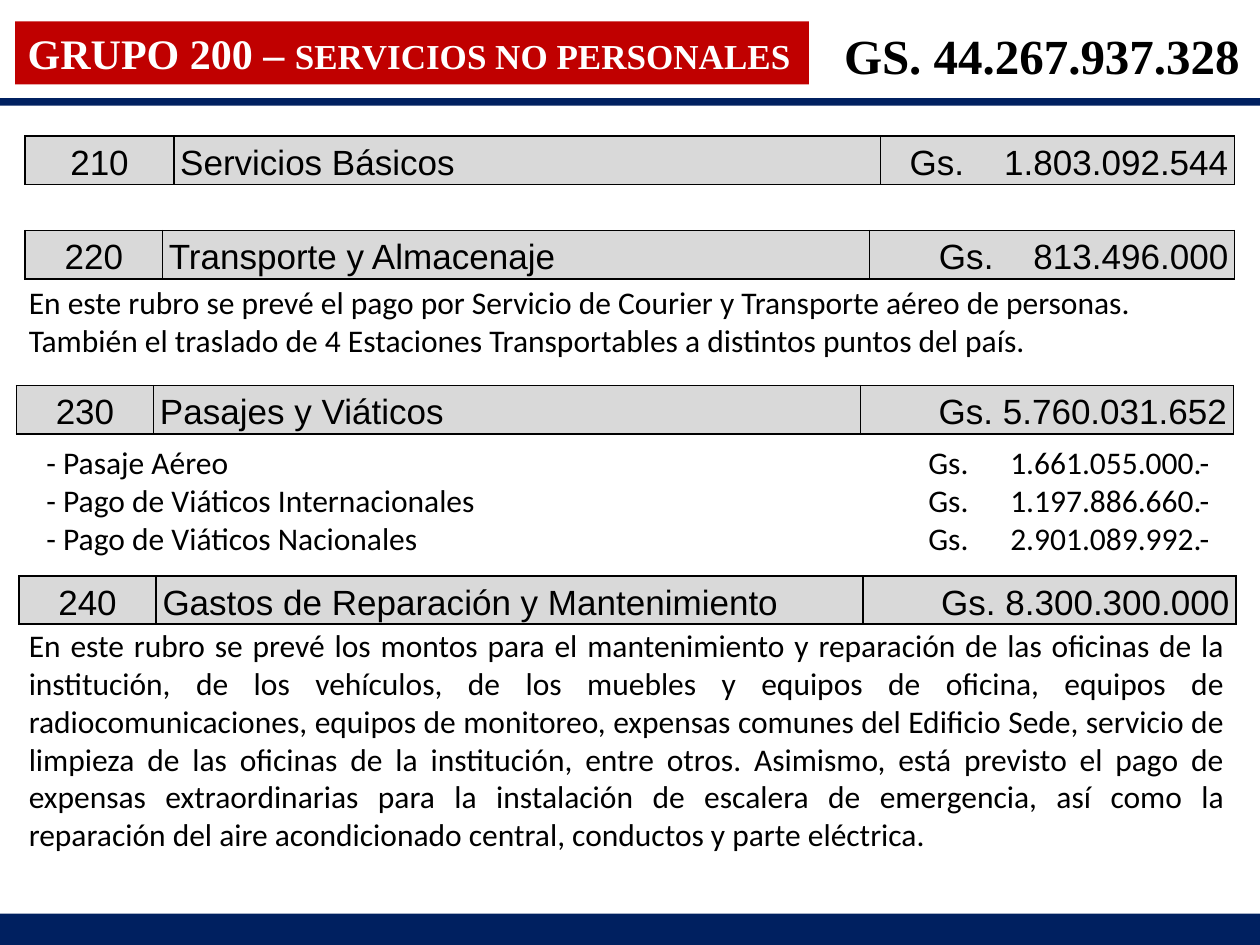
import pptx
import pptx.util
import pptx.oxml.ns
import pptx.dml.color
import pptx.enum.text
import pptx.enum.shapes
from lxml import etree

Inches = pptx.util.Inches
Pt = pptx.util.Pt
RGB = pptx.dml.color.RGBColor.from_string
qn = pptx.oxml.ns.qn
ALIGN = pptx.enum.text.PP_ALIGN
RECT = pptx.enum.shapes.MSO_SHAPE.RECTANGLE

COLORS = {"red": "C00000", "navy": "002060", "gray": "D9D9D9",
          "white": "FFFFFF", "black": "000000"}
HEAD = {"name": "Times New Roman", "bold": True}
BODY = {"name": "Calibri", "size": Pt(18)}
CELL = {"name": "Arial", "size": Pt(20)}


def write(para, text, style, color="black", align=ALIGN.LEFT):
    para.alignment = align
    run = para.add_run()
    run.text = text
    for key, value in style.items():
        setattr(run.font, key, value)
    run.font.color.rgb = RGB(COLORS[color])


def stops(para, places):
    tabs = etree.SubElement(para._p.get_or_add_pPr(), qn("a:tabLst"))
    for place in places:
        etree.SubElement(tabs, qn("a:tab"), pos=str(Inches(place)), algn="l")


deck = pptx.Presentation()
deck.slide_width, deck.slide_height = Inches(10), Inches(7.5)
slide = deck.slides.add_slide(deck.slide_layouts[5])
shapes = slide.shapes

title = shapes.title
title.left, title.top = Inches(0.12), Inches(0.17)
title.width, title.height = Inches(6.3), Inches(0.5)
title.fill.solid()
title.fill.fore_color.rgb = RGB(COLORS["red"])
frame = title.text_frame
frame.auto_size = pptx.enum.text.MSO_AUTO_SIZE.NONE
frame.vertical_anchor = pptx.enum.text.MSO_ANCHOR.TOP
for text, size in [("GRUPO 200 – ", 24), ("SERVICIOS NO PERSONALES", 20)]:
    write(frame.paragraphs[0], text, {**HEAD, "size": Pt(size)}, "white")

for top, height in [(0.78, 0.06), (7.25, 0.25)]:
    band = shapes.add_shape(RECT, 0, Inches(top), Inches(10), Inches(height))
    band.shadow.inherit = False
    band.fill.solid()
    band.fill.fore_color.rgb = RGB(COLORS["navy"])
    band.line.fill.background()

texts = [
    (6.6, 0.15, 3.39, 0.57, {**HEAD, "size": Pt(28)}, ALIGN.LEFT, [],
     ["GS. 44.267.937.328"]),
    (0.13, 2.2, 9.75, 0.71, BODY, ALIGN.LEFT, [],
     ["En este rubro se prevé el pago por Servicio de Courier y Transporte "
      "aéreo de personas. También el traslado de 4 Estaciones Transportables "
      "a distintos puntos del país."]),
    (0.27, 3.47, 9.53, 1.01, BODY, ALIGN.LEFT, [7, 7.65],
     ["- Pasaje Aéreo\tGs.\t1.661.055.000.-",
      "- Pago de Viáticos Internacionales\tGs.\t1.197.886.660.-",
      "- Pago de Viáticos Nacionales\tGs.\t2.901.089.992.-"]),
    (0.13, 4.92, 9.69, 1.92, BODY, ALIGN.JUSTIFY, [],
     ["En este rubro se prevé los montos para el mantenimiento y reparación "
      "de las oficinas de la institución, de los vehículos, de los muebles y "
      "equipos de oficina, equipos de radiocomunicaciones, equipos de "
      "monitoreo, expensas comunes del Edificio Sede, servicio de limpieza "
      "de las oficinas de la institución, entre otros. Asimismo, está "
      "previsto el pago de expensas extraordinarias para la instalación de "
      "escalera de emergencia, así como la reparación del aire acondicionado "
      "central, conductos y parte eléctrica."]),
]
for left, top, width, height, style, align, places, lines in texts:
    box = shapes.add_textbox(Inches(left), Inches(top), Inches(width), Inches(height))
    frame = box.text_frame
    frame.word_wrap = True
    for i, line in enumerate(lines):
        para = frame.paragraphs[0] if i == 0 else frame.add_paragraph()
        write(para, line, style, align=align)
        if places:
            stops(para, places)

tables = [
    (0.2, 1.08, [1.18, 5.61, 2.81], ["210", "Servicios Básicos", "Gs.\t1.803.092.544"]),
    (0.2, 1.83, [1.09, 5.61, 2.9], ["220", "Transporte y Almacenaje", "Gs.\t813.496.000"]),
    (0.13, 3.06, [1.09, 5.61, 2.96], ["230", "Pasajes y Viáticos", "Gs. 5.760.031.652"]),
    (0.15, 4.57, [1.09, 5.61, 2.96],
     ["240", "Gastos de Reparación y Mantenimiento", "Gs. 8.300.300.000"]),
]
FORMAT = {"margin_left": Inches(0.05), "margin_right": Inches(0.05),
          "margin_top": 0, "margin_bottom": 0,
          "vertical_anchor": pptx.enum.text.MSO_ANCHOR.MIDDLE}
for left, top, widths, words in tables:
    table = shapes.add_table(1, 3, Inches(left), Inches(top),
                             Inches(sum(widths)), Inches(0.38)).table
    aligns = [ALIGN.CENTER, ALIGN.LEFT, ALIGN.RIGHT]
    for i, (width, text, align) in enumerate(zip(widths, words, aligns)):
        table.columns[i].width = Inches(width)
        cell = table.cell(0, i)
        for key, value in FORMAT.items():
            setattr(cell, key, value)
        for side in ("a:lnL", "a:lnR", "a:lnT", "a:lnB"):
            edge = etree.SubElement(cell._tc.get_or_add_tcPr(), qn(side), w=str(Pt(1)))
            paint = etree.SubElement(edge, qn("a:solidFill"))
            etree.SubElement(paint, qn("a:srgbClr"), val=COLORS["black"])
        cell.fill.solid()
        cell.fill.fore_color.rgb = RGB(COLORS["gray"])
        para = cell.text_frame.paragraphs[0]
        para.line_spacing = 1.15
        write(para, text, CELL, align=align)
        if "\t" in text:
            stops(para, [0.75])

deck.save("out.pptx")
